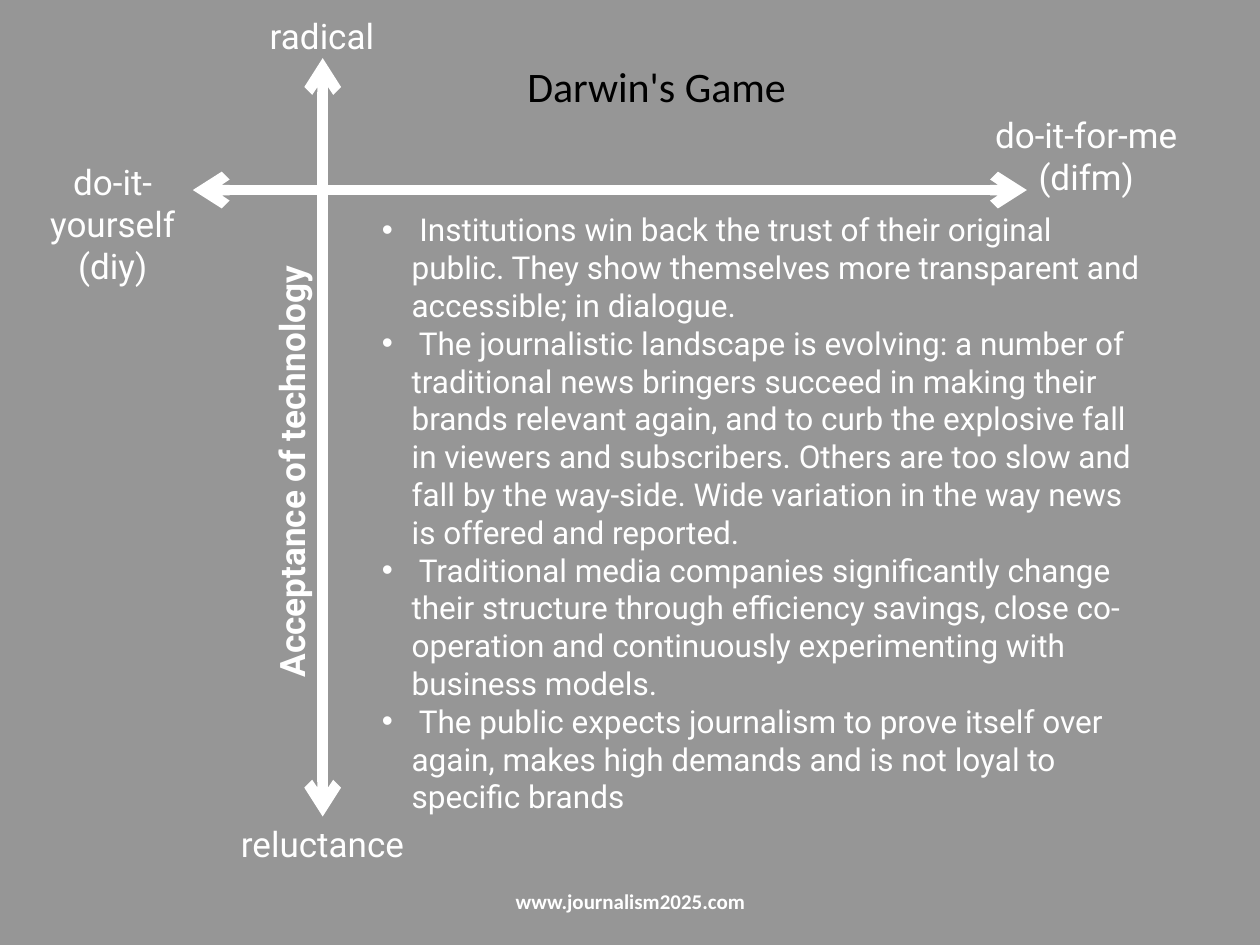
from pptx import Presentation
from pptx.dml.color import RGBColor
from pptx.enum.shapes import MSO_CONNECTOR
from pptx.enum.text import MSO_ANCHOR, MSO_AUTO_SIZE, PP_ALIGN
from pptx.oxml.ns import qn
from pptx.util import Pt
from lxml import etree

STRAIGHT = MSO_CONNECTOR.STRAIGHT
TOP, MIDDLE = MSO_ANCHOR.TOP, MSO_ANCHOR.MIDDLE
LEFT, CENTER, RIGHT = PP_ALIGN.LEFT, PP_ALIGN.CENTER, PP_ALIGN.RIGHT
NO_AUTOFIT = MSO_AUTO_SIZE.NONE

COLORS = {"background": "969696", "light": "FFFFFF", "title": "000000"}
BULLET_INDENT = Pt(17)

AXES = [
    (184.4, 466.6, 184.4, 33.2),
    (110.2, 108.6, 586.8, 108.6),
]
AXIS_LABELS = [
    ("do-it-for-me (difm)", (533.6, 61.4, 174.2, 31.6)),
    ("do-it-yourself (diy)", (0, 88.4, 128.8, 55.6)),
    ("radical", (101.6, 4.8, 164.8, 31.6)),
    ("reluctance", (102.2, 466.6, 164.2, 31.6)),
]
FINDINGS = [
    " Institutions win back the trust of their original public. They show "
    "themselves more transparent and accessible; in dialogue.",
    " The journalistic landscape is evolving: a number of traditional news "
    "bringers succeed in making their brands relevant again, and to curb the "
    "explosive fall in viewers and subscribers. Others are too slow and fall "
    "by the way-side. Wide variation in the way news is offered and reported.",
    " Traditional media companies significantly change their structure through "
    "efficiency savings, close co-operation and continuously experimenting "
    "with business models.",
    " The public expects journalism to prove itself over again, makes high "
    "demands and is not loyal to specific brands",
]


def color(name):
    return RGBColor.from_string(COLORS[name])


def place(box, frame, anchor=TOP):
    box.left, box.top, box.width, box.height = map(Pt, frame)
    text_frame = box.text_frame
    text_frame.word_wrap = True
    text_frame.auto_size = NO_AUTOFIT
    text_frame.vertical_anchor = anchor


def write(para, text, size, font="Roboto", tone="light", align=LEFT, bold=False):
    para.alignment = align
    para.space_before = Pt(0)
    span = para.add_run()
    span.text = text
    span.font.name = font
    span.font.size = Pt(size)
    span.font.bold = bold
    span.font.color.rgb = color(tone)


def add_label(page, text, frame, size=20, anchor=TOP, **style):
    box = page.shapes.add_textbox(0, 0, 0, 0)
    place(box, frame, anchor)
    write(box.text_frame.paragraphs[0], text, size, **style)
    return box


def add_axis(page, ends):
    axis = page.shapes.add_connector(STRAIGHT, *map(Pt, ends))
    axis.line.color.rgb = color("light")
    axis.line.width = Pt(6)
    properties = axis._element.spPr
    outline = properties.find(qn("a:ln"))
    for end in ("a:headEnd", "a:tailEnd"):
        etree.SubElement(outline, qn(end), type="arrow")
    etree.SubElement(properties, qn("a:effectLst"))


def add_bullet(para):
    properties = para._p.get_or_add_pPr()
    properties.set("marL", str(BULLET_INDENT))
    properties.set("indent", str(-BULLET_INDENT))
    etree.SubElement(properties, qn("a:buFont"), typeface="Arial")
    etree.SubElement(properties, qn("a:buChar"), char="•")


def fill_title(page):
    title = page.shapes.title
    place(title, (87.8, 31, 368.6, 36))
    write(title.text_frame.paragraphs[0], "Darwin's Game", 24,
          font="Calibri", tone="title", align=RIGHT)


def fill_findings(page):
    body = page.placeholders[1]
    place(body, (211, 116.6, 448.6, 465.2))
    for index, text in enumerate(FINDINGS):
        text_frame = body.text_frame
        para = text_frame.add_paragraph() if index else text_frame.paragraphs[0]
        add_bullet(para)
        write(para, text, 18)


def main():
    deck = Presentation()
    deck.slide_width, deck.slide_height = Pt(720), Pt(540)
    page = deck.slides.add_slide(deck.slide_layouts[1])
    page.background.fill.solid()
    page.background.fill.fore_color.rgb = color("background")

    for ends in AXES:
        add_axis(page, ends)
    axis_title = add_label(page, "Acceptance of technology",
                           (13.6, 225.4, 306, 31.6), bold=True)
    axis_title.rotation = 270
    for text, frame in AXIS_LABELS:
        add_label(page, text, frame, align=CENTER)
    fill_findings(page)
    fill_title(page)
    add_label(page, "www.journalism2025.com", (246.2, 500.4, 228.2, 28.8),
              size=12, anchor=MIDDLE, font="Calibri", align=CENTER, bold=True)
    deck.save("out.pptx")


if __name__ == "__main__":
    main()
